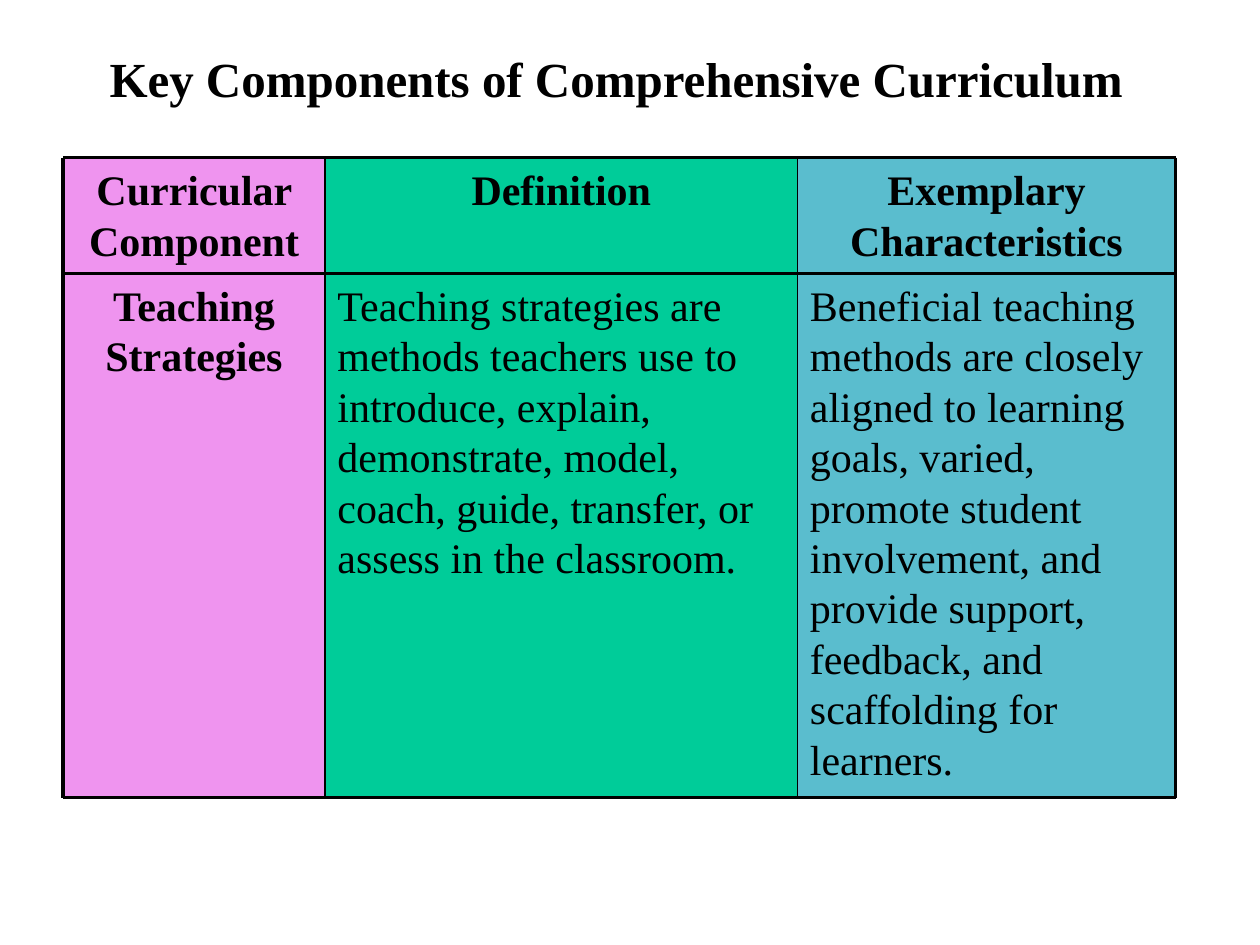
from itertools import accumulate

from lxml.etree import SubElement
from pptx import Presentation
from pptx.dml.color import RGBColor
from pptx.enum.shapes import MSO_CONNECTOR as Connector, MSO_SHAPE as Shape
from pptx.enum.text import MSO_ANCHOR as Anchor, MSO_AUTO_SIZE as AutoSize, PP_ALIGN as Align
from pptx.oxml.ns import qn
from pptx.util import Inches, Pt

# Content
TITLE = "Key Components of Comprehensive Curriculum"
HEADERS = ["Curricular Component", "Definition", "Exemplary Characteristics"]
DETAILS = [
    "Teaching Strategies",
    "Teaching strategies are methods teachers use to introduce, explain, "
    "demonstrate, model, coach, guide, transfer, or assess in the classroom.",
    "Beneficial teaching methods are closely aligned to learning goals, varied, "
    "promote student involvement, and provide support, feedback, and "
    "scaffolding for learners.",
]

# Grid, in inches
FONT = "Times New Roman"
BLACK = "000000"
COLUMN_COLORS = ["EF94EF", "00CC99", "5ABDCE"]
COLUMN_EDGES = list(accumulate([2.08, 3.75, 3], initial=0.5))
HEADER_TOP, BODY_TOP, BODY_BOTTOM = 1.25, 2.17, 6.33


def rgb(color):
    return RGBColor.from_string(color)


def set_text(shape, text, size, bold, align):
    paragraph = shape.text_frame.paragraphs[0]
    paragraph.text = text
    paragraph.alignment = align
    font = paragraph.font
    font.name, font.size, font.bold = FONT, Pt(size), bold
    font.color.rgb = rgb(BLACK)
    return paragraph


def add_cell(group, column, top, bottom, text, bold, align):
    left, right = COLUMN_EDGES[column:column + 2]
    cell = group.shapes.add_shape(Shape.RECTANGLE, Inches(left), Inches(top),
                                  Inches(right - left), Inches(bottom - top))
    cell.shadow.inherit = False
    cell.fill.solid()
    cell.fill.fore_color.rgb = rgb(COLUMN_COLORS[column])
    cell.line.fill.background()
    cell.text_frame.word_wrap = True
    cell.text_frame.vertical_anchor = Anchor.TOP
    set_text(cell, text, 24, bold, align).space_before = Pt(4.8)


def add_rule(group, x1, y1, x2, y2, width):
    rule = group.shapes.add_connector(Connector.STRAIGHT, Inches(x1), Inches(y1),
                                      Inches(x2), Inches(y2))
    rule.line.color.rgb = rgb(BLACK)
    rule.line.width = Pt(width)
    SubElement(rule._element.spPr, qn("a:effectLst"))


def add_row(slide, top, bottom, texts, is_header, rule_heights):
    group = slide.shapes.add_group_shape()
    for column in reversed(range(len(texts))):
        heading = is_header or column == 0
        add_cell(group, column, top, bottom, texts[column], heading,
                 Align.CENTER if heading else Align.LEFT)
    for y in rule_heights:
        add_rule(group, COLUMN_EDGES[0], y, COLUMN_EDGES[-1], y, 2)
    # Outer edges are heavier than column dividers
    for x in COLUMN_EDGES:
        outer = x in (COLUMN_EDGES[0], COLUMN_EDGES[-1])
        add_rule(group, x, top, x, bottom, 2 if outer else 1)


def main():
    presentation = Presentation()
    presentation.slide_width, presentation.slide_height = Inches(10), Inches(7.5)
    slide = presentation.slides.add_slide(presentation.slide_layouts[6])

    # Body row
    add_row(slide, BODY_TOP, BODY_BOTTOM, DETAILS, False, [BODY_BOTTOM])

    # Title
    title = slide.shapes.add_textbox(Inches(0.76), Inches(0.34), Inches(8.26), Inches(0.56))
    title.text_frame.word_wrap = False
    title.text_frame.auto_size = AutoSize.SHAPE_TO_FIT_TEXT
    title.text_frame.vertical_anchor = Anchor.MIDDLE
    set_text(title, TITLE, 28, True, Align.CENTER)

    # Header row
    add_row(slide, HEADER_TOP, BODY_TOP, HEADERS, True, [HEADER_TOP, BODY_TOP])

    presentation.save("out.pptx")


if __name__ == "__main__":
    main()
